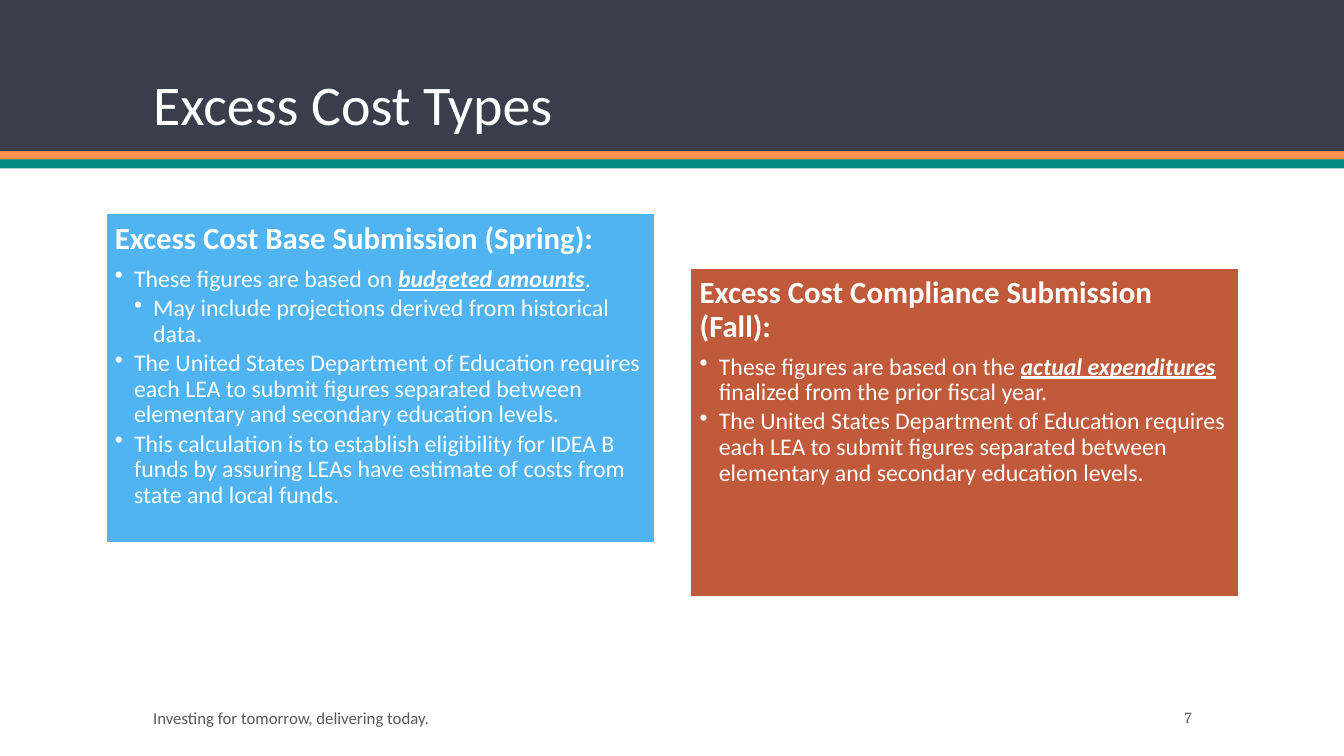
"""Build the Excess Cost Types slide."""
from lxml import etree
from pptx import Presentation
from pptx import util as u
from pptx.dml.color import RGBColor
from pptx.enum import shapes, text

WHITE, GRAY = "FFFFFF", "595959"
BANDS = [(0, 1.5, "3A3D4B"), (1.5, 0.09, "FF914D"), (1.58, 0.09, "048A81")]
STRONG = {"bold": True, "italic": True, "underline": True}
LEVELS = ("The United States Department of Education requires each LEA to submit "
          "figures separated between elementary and secondary education levels.")
CARDS = [
    (1.05, 2.12, "50B4F2", "Excess Cost Base Submission (Spring):", [
        (1, [("These figures are based on ", {}), ("budgeted amounts", STRONG), (".", {})]),
        (2, [("May include projections derived from historical data.", {})]),
        (1, [(LEVELS, {})]),
        (1, [("This calculation is to establish eligibility for IDEA B funds by assuring "
              "LEAs have estimate of costs from state and local funds.", {})]),
    ]),
    (6.85, 2.66, "C05A3A", "Excess Cost Compliance Submission (Fall):", [
        (1, [("These figures are based on the ", {}), ("actual expenditures ", STRONG),
             ("finalized from the prior fiscal year.", {})]),
        (1, [(LEVELS, {})]),
    ]),
]


def color(code):
    """Return the colour for a hex string."""
    return RGBColor.from_string(code)


def apply(item, values):
    """Set each attribute named in a dict."""
    for name, value in values.items():
        setattr(item, name, value)


def rect(slide, box, fill, line=None):
    """Add a flat rectangle."""
    shape = slide.shapes.add_shape(shapes.MSO_SHAPE.RECTANGLE, *map(u.Inches, box))
    shape.shadow.inherit = False
    shape.fill.solid()
    shape.fill.fore_color.rgb = color(fill)
    if line:
        shape.line.color.rgb = color(line)
        shape.line.width = u.Pt(1)
    else:
        shape.line.fill.background()
    return shape


def write(para, words, size, ink=WHITE, face="Calibri", **style):
    """Add one styled run to a paragraph."""
    run = para.add_run()
    run.text = words
    apply(run.font, {"name": face, "size": u.Pt(size), **style})
    run.font.color.rgb = color(ink)


def label(slide, box, words, size, ink, anchor, face="Calibri", **form):
    """Add a one-line text box."""
    frame = slide.shapes.add_textbox(*map(u.Inches, box)).text_frame
    apply(frame, {"word_wrap": True, "vertical_anchor": anchor})
    para = frame.paragraphs[0]
    apply(para, form)
    write(para, words, size, ink, face)


def bullet(para, level):
    """Give a paragraph a hanging bullet."""
    props = para._p.get_or_add_pPr()
    step = u.Inches(0.19)
    props.set("marL", str(step * level))
    props.set("indent", str(-step))
    mark = etree.SubElement(props, props.tag.replace("pPr", "buChar"))
    mark.set("char", "•")


def card(slide, left, top, fill, head, points):
    """Add a coloured card with a heading and bullets."""
    frame = rect(slide, (left, top, 5.44, 3.26), fill, WHITE).text_frame
    sides = ("left", "right", "top", "bottom")
    apply(frame, {f"margin_{side}": u.Inches(0.09) for side in sides})
    apply(frame, {"word_wrap": True, "vertical_anchor": text.MSO_ANCHOR.TOP})
    form = {"alignment": text.PP_ALIGN.LEFT, "line_spacing": 0.9}
    para = frame.paragraphs[0]
    apply(para, {**form, "space_after": u.Pt(7.7)})
    write(para, head, 22, bold=True)
    for level, runs in points:
        para = frame.add_paragraph()
        apply(para, {**form, "level": level, "space_after": u.Pt(2.5)})
        bullet(para, level)
        for words, style in runs:
            write(para, words, 17, **style)


def main():
    """Build and save the slide."""
    deck = Presentation()
    apply(deck, {"slide_width": u.Inches(13.33), "slide_height": u.Inches(7.5)})
    slide = deck.slides.add_slide(deck.slide_layouts[6])
    for top, height, fill in BANDS:
        rect(slide, (0, top, 13.33, height), fill)
    anchor = text.MSO_ANCHOR
    label(slide, (1.42, 0.28, 10.5, 1.13), "Excess Cost Types", 40, WHITE,
          anchor.BOTTOM, line_spacing=0.9)
    label(slide, (1.42, 6.97, 6.83, 0.3), "Investing for tomorrow, delivering today.",
          12, GRAY, anchor.MIDDLE)
    label(slide, (10.42, 6.97, 1.5, 0.3), "7", 11, GRAY, anchor.MIDDLE, "Cambria",
          alignment=text.PP_ALIGN.RIGHT)
    for item in CARDS:
        card(slide, *item)
    deck.save("out.pptx")


if __name__ == "__main__":
    main()
